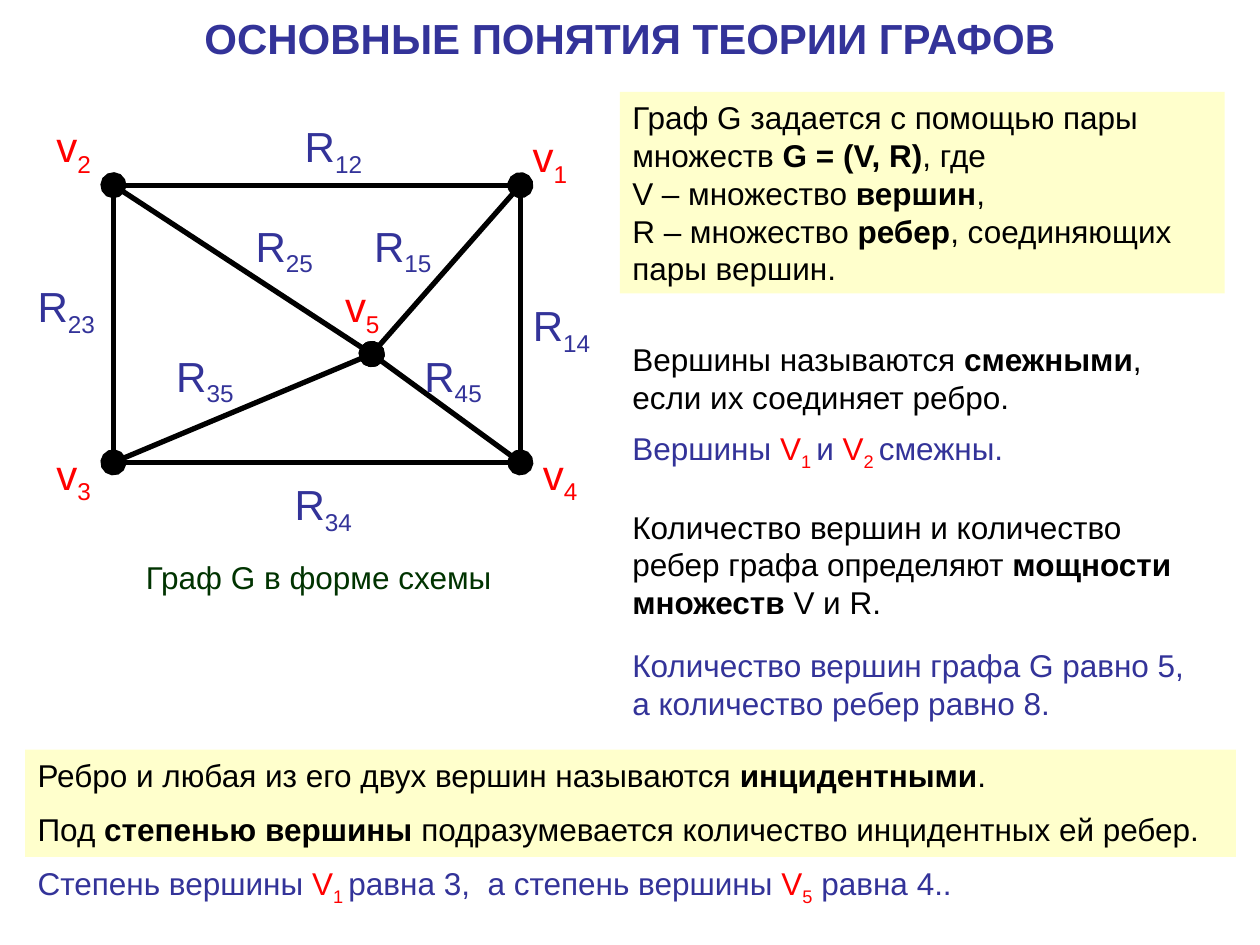
from lxml import etree
from pptx import Presentation
from pptx import util as u
from pptx.dml.color import RGBColor
from pptx.enum import shapes, text
from pptx.oxml import ns

BLUE, RED, BLACK, GREEN = "333399", "FF0000", "000000", "003300"
WHITE, CREAM = "FFFFFF", "FFFFCC"


def tint(code):
    return RGBColor.from_string(code)


class Board:
    font = "Arial"

    def __init__(self, slide):
        self.slide = slide

    def fill_text(self, shape, paras, size, color, gap):
        """Each run is a string or (string, marks): b bold, r red, s subscript."""
        frame = shape.text_frame
        frame.word_wrap = True
        for i, runs in enumerate(paras):
            para = frame.add_paragraph() if i else frame.paragraphs[0]
            para.alignment = text.PP_ALIGN.LEFT
            para.space_before = u.Pt(gap if i else 0)
            for part in runs:
                words, marks = (part, "") if isinstance(part, str) else part
                run = para.add_run()
                run.text = words
                run.font.name = self.font
                run.font.size = u.Pt(size)
                run.font.bold = "b" in marks
                run.font.color.rgb = tint(RED if "r" in marks else color)
                if "s" in marks:
                    run.font._element.set("baseline", "-25000")
        return frame

    def label(self, box, *paras, size=18, color=BLACK, gap=0):
        shape = self.slide.shapes.add_textbox(*map(u.Inches, box))
        return self.fill_text(shape, paras, size, color, gap)

    def panel(self, box, fill, *paras, size=18, color=BLACK, gap=0):
        shape = self.slide.shapes.add_shape(
            shapes.MSO_SHAPE.RECTANGLE, *map(u.Inches, box))
        shape.shadow.inherit = False
        shape.fill.solid()
        shape.fill.fore_color.rgb = tint(fill)
        shape.line.fill.background()
        frame = self.fill_text(shape, paras, size, color, gap)
        frame.vertical_anchor = text.MSO_ANCHOR.TOP
        return frame

    def edge(self, start, end, dots=False):
        line = self.slide.shapes.add_connector(
            shapes.MSO_CONNECTOR.STRAIGHT, *map(u.Inches, start + end))
        line.line.color.rgb = tint(BLACK)
        line.line.width = u.Pt(3)
        props = line._element.spPr
        if dots:
            for tag in ("a:headEnd", "a:tailEnd"):
                etree.SubElement(props.find(ns.qn("a:ln")), ns.qn(tag),
                                 type="oval", w="lg", len="lg")
        etree.SubElement(props, ns.qn("a:effectLst"))


def main():
    deck = Presentation()
    deck.slide_width, deck.slide_height = u.Inches(10), u.Inches(7.5)
    board = Board(deck.slides.add_slide(deck.slide_layouts[6]))

    # Title
    title = board.panel((0, 0, 10, 0.6), WHITE,
                        [("ОСНОВНЫЕ ПОНЯТИЯ ТЕОРИИ ГРАФОВ", "b")],
                        size=24, color=BLUE)
    title.vertical_anchor = text.MSO_ANCHOR.MIDDLE
    title.paragraphs[0].alignment = text.PP_ALIGN.CENTER

    # Graph edges: the spokes from vertex 5 carry the vertex dots
    left, right, top, low = 0.9, 4.13, 1.47, 3.67
    nodes = {1: (right, top), 2: (left, top), 3: (left, low),
             4: (right, low), 5: (2.95, 2.81)}
    for a, b in ((3, 2), (4, 1), (4, 5), (5, 1), (2, 1), (4, 3), (5, 3), (5, 2)):
        board.edge(nodes[a], nodes[b], dots=5 in (a, b))

    # Vertex and edge names
    spots = {"4": (4.21, 3.51), "1": (4.13, 0.99), "2": (0.35, 0.91),
             "3": (0.35, 3.51), "5": (2.64, 2.18)}
    for num, spot in spots.items():
        board.label(spot + (0.63, 0.5), [("v", "r"), (num, "rs")], size=24)
    spots = {"12": (2.32, 0.91), "14": (4.13, 2.33), "15": (2.87, 1.7),
             "25": (1.93, 1.7), "23": (0.2, 2.18), "35": (1.3, 2.73),
             "45": (3.27, 2.73), "34": (2.24, 3.75)}
    for num, spot in spots.items():
        board.label(spot + (0.79, 0.5), ["R", (num, "s")], size=24, color=BLUE)
    board.label((1.06, 4.38, 3.31, 0.4), ["Граф G в форме схемы"], color=GREEN)

    # Definitions
    col = 4.92
    board.panel((col, 0.73, 4.8, 1.6), CREAM,
                ["Граф G задается с помощью пары множеств ",
                 ("G = (V, R)", "b"), ", где"],
                ["V – множество ", ("вершин", "b"), ","],
                ["R – множество ", ("ребер", "b"), ", соединяющих пары вершин."])
    board.panel((col, 2.65, 4.8, 0.7), WHITE,
                ["Вершины называются ", ("смежными", "b"),
                 ", если их соединяет ребро."])
    board.panel((col, 3.98, 4.8, 1), WHITE,
                ["Количество вершин и количество ребер графа определяют ",
                 ("мощности множеств ", "b"), "V и R."])
    board.panel((0.2, 5.95, 9.61, 0.85), CREAM,
                ["Ребро и любая из его двух вершин называются ",
                 ("инцидентными", "b"), "."],
                ["Под ", ("степенью вершины", "b"),
                 " подразумевается количество инцидентных ей ребер."], gap=9.5)

    # Examples
    board.label((col, 5.08, 4.72, 0.7),
                ["Количество вершин графа G равно 5, а количество ребер равно 8."],
                color=BLUE)
    board.label((0.2, 6.81, 9.45, 0.4),
                ["Степень вершины ", ("V", "r"), ("1 ", "rs"),
                 "равна 3,  а степень вершины ", ("V", "r"), ("5", "rs"),
                 " равна 4.."], color=BLUE)
    board.label((col, 3.36, 4.72, 0.4),
                ["Вершины ", ("V", "r"), ("1 ", "rs"), "и ", ("V", "r"),
                 ("2 ", "rs"), "смежны."], color=BLUE)

    deck.save("out.pptx")


if __name__ == "__main__":
    main()
